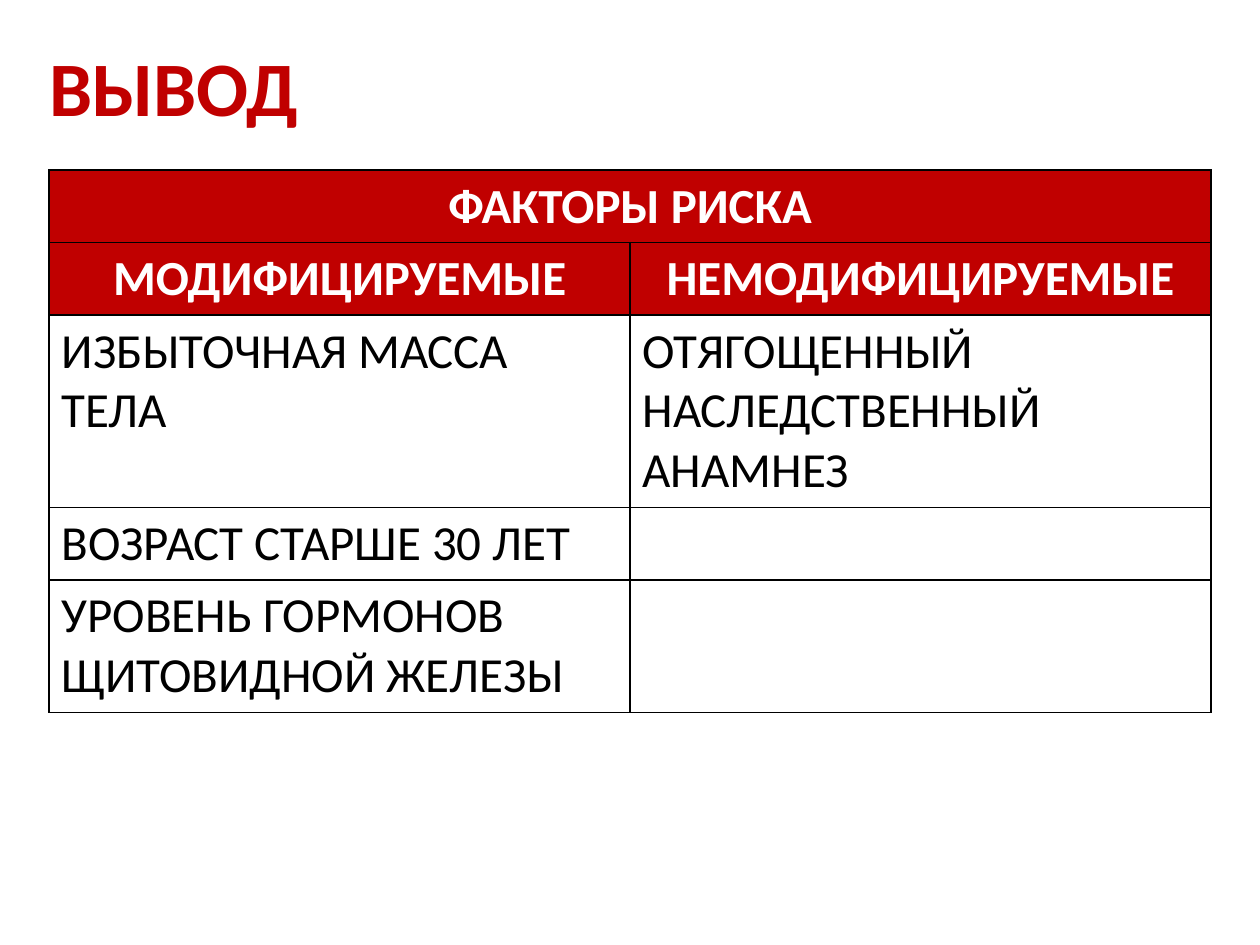
from lxml import etree
from pptx import Presentation
from pptx import util as u
from pptx.dml.color import RGBColor
from pptx.enum import text
from pptx.oxml import ns

RED = RGBColor(0xC0, 0x00, 0x00)
WHITE = RGBColor(0xFF, 0xFF, 0xFF)
BLACK = RGBColor(0x00, 0x00, 0x00)

TITLE = {"size": u.Pt(44), "bold": True, "color": RED}
HEADING = {"size": u.Pt(28), "bold": True, "color": WHITE}
FACTOR = {"size": u.Pt(28), "bold": False, "color": BLACK}

HEADING_ROWS = 2
RISK_FACTORS = [
    ("ФАКТОРЫ РИСКА", ""),
    ("МОДИФИЦИРУЕМЫЕ", "НЕМОДИФИЦИРУЕМЫЕ"),
    ("ИЗБЫТОЧНАЯ МАССА ТЕЛА", "ОТЯГОЩЕННЫЙ НАСЛЕДСТВЕННЫЙ АНАМНЕЗ"),
    ("ВОЗРАСТ СТАРШЕ 30 ЛЕТ", ""),
    ("УРОВЕНЬ ГОРМОНОВ ЩИТОВИДНОЙ ЖЕЛЕЗЫ", ""),
]
ROW_HEIGHTS = [0.57, 0.57, 1.5, 0.57, 1.02]


class SlideBuilder:
    font_name = "Calibri"
    border_width = u.Pt(1)

    def __init__(self, slide):
        self.slide = slide

    def add_words(self, paragraph, words, style, align):
        paragraph.alignment = align
        run = paragraph.add_run()
        run.text = words
        run.font.name = self.font_name
        for name, value in style.items():
            if name == "color":
                run.font.color.rgb = value
            else:
                setattr(run.font, name, value)

    def title(self, words, box):
        heading = self.slide.shapes.title
        for name, value in zip(("left", "top", "width", "height"), box):
            setattr(heading, name, u.Inches(value))
        frame = heading.text_frame
        frame.auto_size = text.MSO_AUTO_SIZE.NONE
        frame.vertical_anchor = text.MSO_ANCHOR.MIDDLE
        frame.paragraphs[0].line_spacing = 0.9
        self.add_words(frame.paragraphs[0], words, TITLE, text.PP_ALIGN.LEFT)

    def border(self, cell):
        properties = cell._tc.get_or_add_tcPr()
        for side in ("lnL", "lnR", "lnT", "lnB"):
            line = etree.SubElement(properties, ns.qn(f"a:{side}"), w=str(self.border_width))
            fill = etree.SubElement(line, ns.qn("a:solidFill"))
            etree.SubElement(fill, ns.qn("a:srgbClr"), val=str(BLACK))

    def table(self, rows, heights, box):
        table = self.slide.shapes.add_table(
            len(rows), len(rows[0]), *map(u.Inches, box)).table
        table.first_row = table.horz_banding = False
        for r, (row, height) in enumerate(zip(rows, heights)):
            table.rows[r].height = u.Inches(height)
            is_heading = r < HEADING_ROWS
            for c, words in enumerate(row):
                cell = table.cell(r, c)
                self.border(cell)
                if is_heading:
                    cell.fill.solid()
                    cell.fill.fore_color.rgb = RED
                else:
                    cell.fill.background()
                if words:
                    self.add_words(cell.text_frame.paragraphs[0], words,
                                   HEADING if is_heading else FACTOR,
                                   text.PP_ALIGN.CENTER if is_heading else text.PP_ALIGN.LEFT)
        # The top heading spans every column
        table.cell(0, 0).merge(table.cell(0, len(rows[0]) - 1))


def main():
    deck = Presentation()
    deck.slide_width, deck.slide_height = u.Inches(10), u.Inches(7.5)
    conclusion = SlideBuilder(deck.slides.add_slide(deck.slide_layouts[5]))

    # Title
    conclusion.title("ВЫВОД", (0.29, 0, 8.62, 1.45))

    # Risk factor table
    conclusion.table(RISK_FACTORS, ROW_HEIGHTS, (0.39, 1.35, 9.22, sum(ROW_HEIGHTS)))

    deck.save("out.pptx")


if __name__ == "__main__":
    main()
